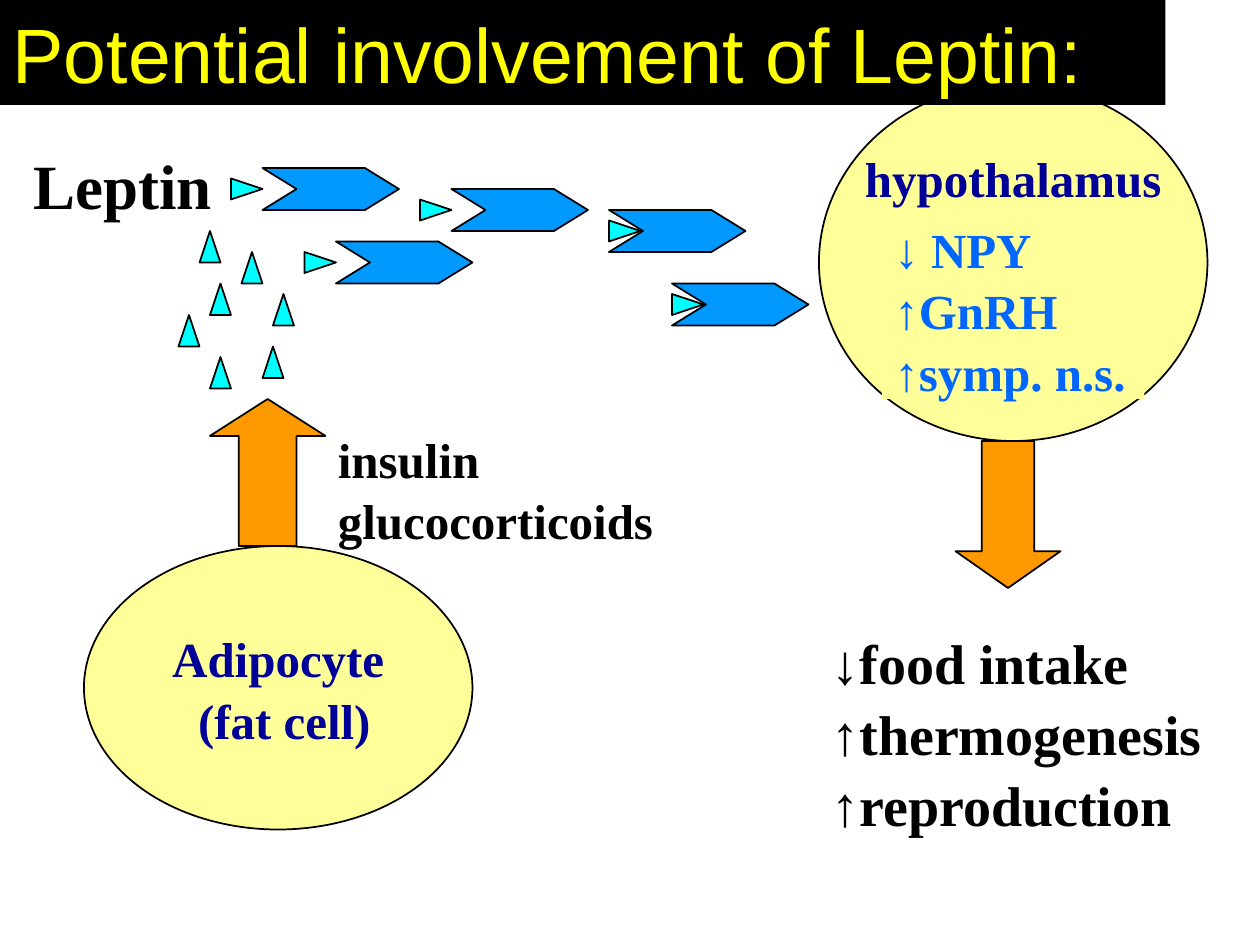
from pptx import Presentation
from pptx.dml.color import RGBColor
from pptx.enum.shapes import MSO_SHAPE as Shape
from pptx.enum.text import MSO_ANCHOR as Anchor, PP_ALIGN as Align
from pptx.util import Emu, Pt

PX = 7620
SERIF = "Times New Roman"
BLACK, NAVY, BLUE = "000000", "000099", "0066FF"
CREAM, ORANGE, CYAN, AZURE = "FFFF99", "FF9900", "00FFFF", "0099FF"

TITLE = "Potential involvement of Leptin:"
ADIPOCYTE = ["Adipocyte", " (fat cell)"]
HYPOTHALAMUS = ["hypothalamus"]
SIGNALS = ["↓ NPY", "↑GnRH", "↑symp. n.s."]
LABELS = [
    (["Leptin"], 36, (20, 130, 194, 84)),
    (["insulin", "glucocorticoids"], 28, (310, 400, 324, 124)),
    (["↓food intake", "↑thermogenesis", "↑reproduction"], 32, (780, 590, 383, 204)),
]
BLOCK_ARROWS = [
    (Shape.UP_ARROW, (200, 380, 110, 140), 0.32),
    (Shape.DOWN_ARROW, (910, 420, 100, 140), 0.35),
]
RECEPTOR_SIZE = (130, 40)
LEPTIN_SIZE = (20, 30)
FREE, BOUND = -25, 5
RECEPTORS = [
    (250, 160, FREE), (320, 230, FREE), (430, 180, FREE),
    (580, 200, BOUND), (640, 270, BOUND),
]
SECRETED = [
    (200, 270), (260, 280), (230, 240), (250, 330),
    (170, 300), (200, 340), (190, 220),
]


def px(*lengths):
    return [Emu(length * PX) for length in lengths]


def color(code):
    return RGBColor.from_string(code)


def add_figure(parent, preset, box, fill, outlined=True, adjustments=()):
    figure = parent.add_shape(preset, *px(*box))
    figure.shadow.inherit = False
    figure.fill.solid()
    figure.fill.fore_color.rgb = color(fill)
    if outlined:
        figure.line.color.rgb = color(BLACK)
        figure.line.width = Pt(1)
    else:
        figure.line.fill.background()
    for index, value in enumerate(adjustments):
        figure.adjustments[index] = value
    return figure


def write(holder, lines, size, code, font=SERIF, bold=True,
          align=Align.LEFT, anchor=Anchor.TOP, wrap=False, spacing=1.05):
    frame = holder.text_frame
    frame.word_wrap = wrap
    frame.vertical_anchor = anchor
    for index, line in enumerate(lines):
        paragraph = frame.add_paragraph() if index else frame.paragraphs[0]
        paragraph.alignment = align
        paragraph.line_spacing = spacing
        run = paragraph.add_run()
        run.text = line
        run.font.size = Pt(size)
        run.font.name = font
        run.font.bold = bold
        run.font.color.rgb = color(code)


def add_leptin(parent, x, y, rotation=0):
    leptin = add_figure(parent, Shape.ISOSCELES_TRIANGLE, (x, y, *LEPTIN_SIZE), CYAN)
    leptin.rotation = rotation


def main():
    deck = Presentation()
    deck.slide_width, deck.slide_height = px(1200, 900)
    slide = deck.slides.add_slide(deck.slide_layouts[5])
    shapes = slide.shapes

    adipocyte = add_figure(shapes, Shape.OVAL, (80, 520, 370, 270), CREAM)
    write(adipocyte, ADIPOCYTE, 28, NAVY, align=Align.CENTER, anchor=Anchor.MIDDLE)

    hypothalamus = add_figure(shapes, Shape.OVAL, (780, 80, 370, 340), CREAM)
    write(hypothalamus, HYPOTHALAMUS, 28, NAVY, align=Align.CENTER)
    hypothalamus.text_frame.margin_top = px(9)[0]

    signals = add_figure(shapes, Shape.RECTANGLE, (840, 200, 250, 180), CREAM, outlined=False)
    write(signals, SIGNALS, 28, BLUE)

    for preset, box, head in BLOCK_ARROWS:
        add_figure(shapes, preset, box, ORANGE, adjustments=(0.5, head))

    for lines, size, box in LABELS:
        write(shapes.add_textbox(*px(*box)), lines, size, BLACK)

    transport = shapes.add_group_shape().shapes
    for x, y, offset in RECEPTORS:
        add_figure(transport, Shape.CHEVRON, (x, y, *RECEPTOR_SIZE), AZURE, adjustments=(0.81,))
        add_leptin(transport, x + offset, y + 5, rotation=90)

    secretion = shapes.add_group_shape().shapes
    for x, y in SECRETED:
        add_leptin(secretion, x, y)

    title = shapes.title
    title.left, title.top, title.width, title.height = px(0, 0, 1110, 100)
    title.fill.solid()
    title.fill.fore_color.rgb = color(BLACK)
    write(title, [TITLE], 44, "FFFF00", font="Arial", bold=False,
          anchor=Anchor.MIDDLE, wrap=True, spacing=1.0)
    title.element.getparent().append(title.element)

    deck.save("out.pptx")


if __name__ == "__main__":
    main()
